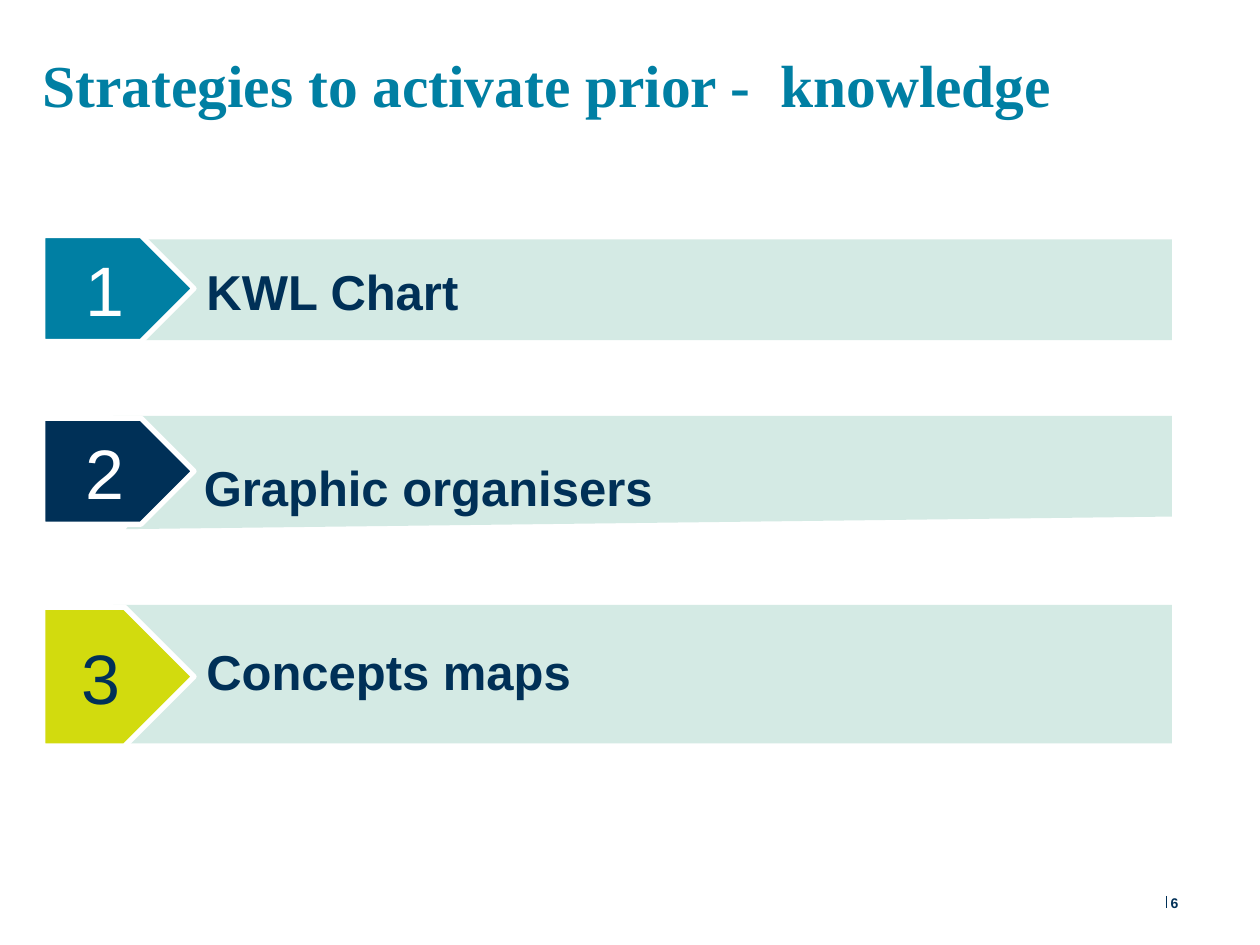
"""Build a slide listing three numbered strategies on a grid of 100 columns by 75 rows."""
from dataclasses import dataclass

from lxml import etree
from pptx import Presentation
from pptx import util as u
from pptx.dml.color import RGBColor
from pptx.enum import shapes, text
from pptx.oxml import ns

COLS, ROWS = 100, 75
CELL = u.Inches(0.1)
TEAL = RGBColor(0x00, 0x7F, 0xA3)
NAVY = RGBColor(0x00, 0x30, 0x57)
LIME = RGBColor(0xD2, 0xDB, 0x0E)
MINT = RGBColor(0xD4, 0xEA, 0xE4)
WHITE = RGBColor(0xFF, 0xFF, 0xFF)
LEFT, TAG, NOTCH = 3.4, 12, 13.7


@dataclass
class Item:
    label: str
    fill: RGBColor
    ink: RGBColor
    top: float
    tall: float
    band: float
    base: float
    right: float
    text_x: float
    text_y: float
    text_w: float


ITEMS = [
    Item("KWL Chart", TEAL, WHITE, 18.7, 8.4, 18.6, 27, 92.9, 15.4, 20.3, 77.5),
    Item("Graphic organisers", NAVY, WHITE, 33.2, 8.4, 33, 41.3, 92.7, 15.2, 35.8, 79.4),
    Item("Concepts maps", LIME, NAVY, 48.2, 11, 48.3, 59, 92.9, 15.4, 50.4, 49.7),
]


def grid(*cells: float) -> list[int]:
    return [u.Emu(round(c * CELL)) for c in cells]


def write(shape, words: str, *, size: float, color: RGBColor, font: str = "Arial",
          bold: bool = False, align=None, anchor=text.MSO_ANCHOR.TOP,
          inset: bool = True, space: float | None = None) -> None:
    frame = shape.text_frame
    frame.word_wrap = True
    frame.vertical_anchor = anchor
    if not inset:
        frame.margin_left = frame.margin_right = 0
        frame.margin_top = frame.margin_bottom = 0
    para = frame.paragraphs[0]
    para.alignment = align
    para.line_spacing = space
    run = para.add_run()
    run.text = words
    run.font.name, run.font.size, run.font.bold = font, u.Pt(size), bold
    run.font.color.rgb = color


def label(slide, words: str, box: tuple, **form) -> None:
    write(slide.shapes.add_textbox(*grid(*box)), words, **form)


def draw_band(slide, item: Item) -> None:
    path = slide.shapes.build_freeform(item.right, item.base, scale=CELL)
    path.add_line_segments([
        (9.7, item.base + 0.2), (NOTCH, item.top + item.tall / 2),
        (9.4, item.band), (item.right, item.band)], close=True)
    band = path.convert_to_shape()
    band.shadow.inherit = False
    band.fill.solid()
    band.fill.fore_color.rgb = MINT
    band.line.fill.background()


def draw_tag(slide, num: int, item: Item) -> None:
    tag = slide.shapes.add_shape(shapes.MSO_SHAPE.PENTAGON,
                                 *grid(LEFT, item.top, TAG, item.tall))
    tag.shadow.inherit = False
    tag.fill.solid()
    tag.fill.fore_color.rgb = item.fill
    tag.line.color.rgb = WHITE
    tag.line.width = u.Pt(3)
    write(tag, str(num), size=40, color=item.ink,
          align=text.PP_ALIGN.CENTER, anchor=text.MSO_ANCHOR.MIDDLE)


def draw_item(slide, num: int, item: Item) -> None:
    draw_band(slide, item)
    draw_tag(slide, num, item)
    label(slide, item.label, (item.text_x, item.text_y, item.text_w, 5.7),
          size=28, color=NAVY, bold=True)


def draw_foot(slide) -> None:
    rule = slide.shapes.add_connector(shapes.MSO_CONNECTOR.STRAIGHT,
                                      *grid(92.6, 71.1, 92.6, 72.1))
    rule.line.color.rgb = NAVY
    rule.line.width = u.Pt(0.75)
    etree.SubElement(rule._element.spPr, ns.qn("a:effectLst"))
    label(slide, "6", (92.9, 71, 4.7, 1.4), size=8, color=NAVY, bold=True,
          anchor=text.MSO_ANCHOR.MIDDLE, inset=False)


def main() -> None:
    deck = Presentation()
    deck.slide_width, deck.slide_height = COLS * CELL, ROWS * CELL
    slide = deck.slides.add_slide(deck.slide_layouts[6])
    draw_foot(slide)
    label(slide, "Strategies to activate prior -  knowledge", (LEFT, 2.8, 91.3, 7.2),
          size=34, color=TEAL, font="Times New Roman", bold=True,
          inset=False, space=1.18)
    for num, item in enumerate(ITEMS, 1):
        draw_item(slide, num, item)
    deck.save("out.pptx")


if __name__ == "__main__":
    main()
